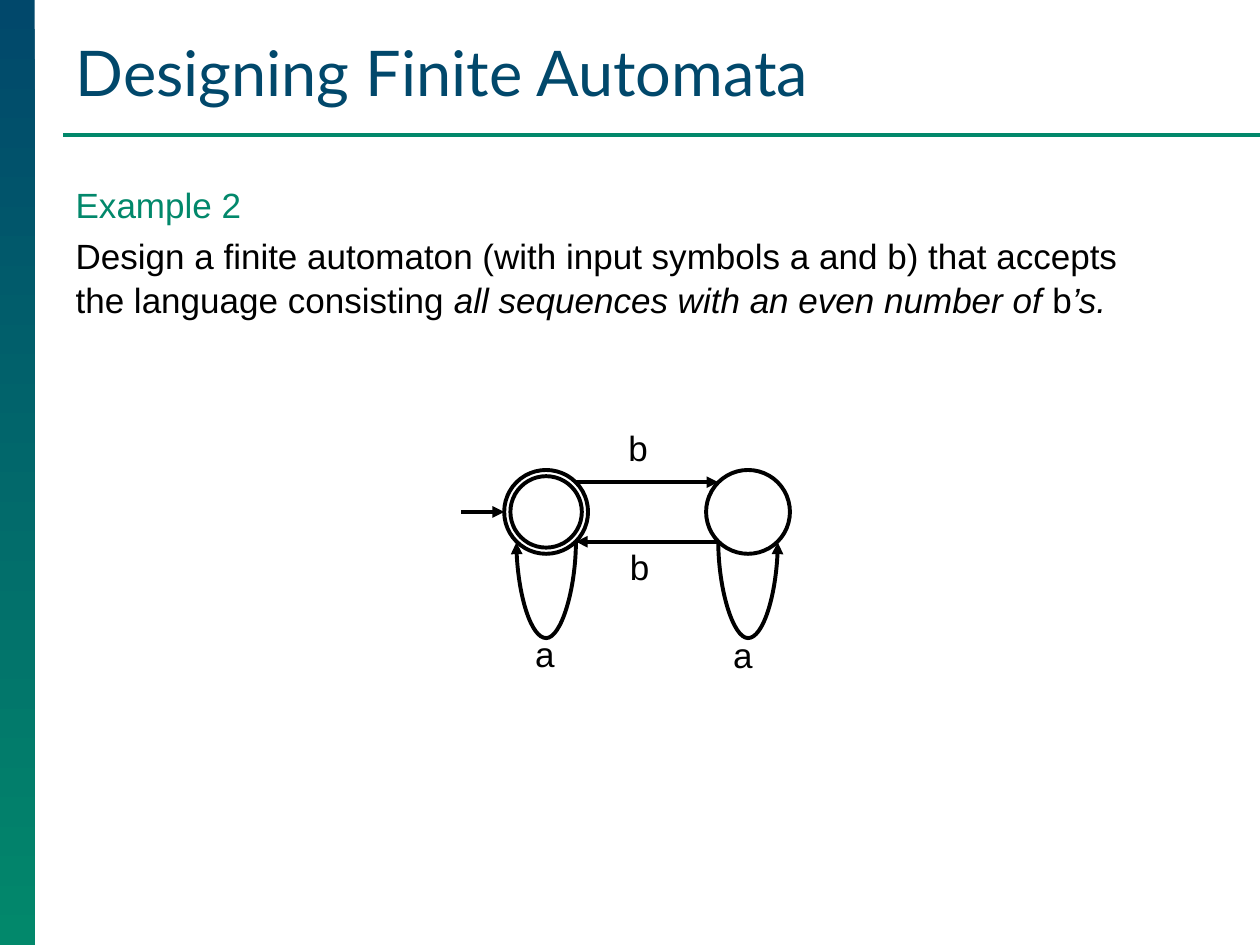
from lxml.etree import SubElement
from pptx import Presentation
from pptx.dml.color import RGBColor
from pptx.enum.shapes import MSO_CONNECTOR, MSO_SHAPE
from pptx.enum.text import MSO_ANCHOR, MSO_AUTO_SIZE, PP_ALIGN
from pptx.oxml.ns import qn
from pptx.util import Cm, Pt

NAVY = RGBColor(0x01, 0x48, 0x6B)
GREEN = RGBColor(0x02, 0x88, 0x6B)
BLACK = RGBColor(0, 0, 0)
LINE_WIDTH = Pt(2.25)

TITLE = "Designing Finite Automata"
# Each paragraph: colour, then runs of (text, italic)
BODY = [
    (GREEN, [("Example 2", False)]),
    (BLACK, [
        ("Design a finite automaton (with input symbols a and b) that accepts "
         "the language consisting ", False),
        ("all sequences with an even number of ", True),
        ("b", False),
        ("’s.", True),
    ]),
]

# Automaton geometry in centimetres
EVEN_X, ODD_X, STATE_Y = 11.01, 15.08, 10.32
STATE_SIZE, ACCEPT_SIZE = 1.69, 1.44
DIAGONAL = 0.6  # offset from a state's centre to its 45-degree points
START_X = 9.3
LOOP_DEPTH, LOOP_THICKNESS = 1.96, 0.03
# Left and top of each transition label
LABELS = [("a", 10.54, 12.62), ("a", 14.53, 12.65),
          ("b", 12.42, 8.48), ("b", 12.45, 10.87)]


def style_font(font, size, color, name="Arial"):
    font.size, font.name = Pt(size), name
    font.color.rgb = color


def add_line(kind, start, end, color=BLACK, arrow=True):
    line = slide.shapes.add_connector(kind, *(Cm(v) for v in (*start, *end)))
    line.line.color.rgb = color
    line.line.width = LINE_WIDTH
    if arrow:
        SubElement(line.line._get_or_add_ln(), qn("a:tailEnd"), type="triangle")
    SubElement(line._element.spPr, qn("a:effectLst"))
    return line


def add_arrow(start, end):
    add_line(MSO_CONNECTOR.STRAIGHT, start, end)


def add_state(x, size):
    circle = slide.shapes.add_shape(
        MSO_SHAPE.OVAL, Cm(x - size / 2), Cm(STATE_Y - size / 2), Cm(size), Cm(size))
    circle.shadow.inherit = False
    circle.fill.background()
    circle.line.color.rgb = BLACK
    circle.line.width = LINE_WIDTH


def add_loop(x, to_right):
    """Hang a loop under a state: a thin curved connector, turned to point down."""
    y = STATE_Y + DIAGONAL
    half = LOOP_THICKNESS / 2
    loop = add_line(MSO_CONNECTOR.CURVE, (x - half, y - DIAGONAL), (x + half, y + DIAGONAL))
    loop.rotation = 270 if to_right else 90
    if to_right:
        loop._element.spPr.find(qn("a:xfrm")).set("flipH", "1")
    bend = round(LOOP_DEPTH / LOOP_THICKNESS * 100000)
    adjustments = loop._element.spPr.find(qn("a:prstGeom")).get_or_add_avLst()
    SubElement(adjustments, qn("a:gd"), name="adj1", fmla=f"val {bend}")


def add_label(text, left, top):
    box = slide.shapes.add_textbox(Cm(left), Cm(top), Cm(0.91), Cm(1.12))
    box.text_frame.text = text
    box.text_frame.word_wrap = False
    style_font(box.text_frame.paragraphs[0].runs[0].font, 20, BLACK)


def place(shape, left, top, width, height):
    shape.left, shape.top = Cm(left), Cm(top)
    shape.width, shape.height = Cm(width), Cm(height)


prs = Presentation()
prs.slide_width, prs.slide_height = Cm(25.4), Cm(19.05)
slide = prs.slides.add_slide(prs.slide_layouts[1])

# Side band and title rule
band = slide.shapes.add_shape(MSO_SHAPE.RECTANGLE, 0, 0, Cm(0.7), prs.slide_height)
band.shadow.inherit = False
band.line.fill.background()
band.fill.gradient()
band.fill.gradient_angle = 270
for stop, color, position in zip(band.fill.gradient_stops, (NAVY, GREEN), (0, 1)):
    stop.color.rgb = color
    stop.position = position
add_line(MSO_CONNECTOR.STRAIGHT, (1.27, 2.72), (25.4, 2.72), GREEN, arrow=False)

# Title and body
title = slide.shapes.title
place(title, 1.27, 0.53, 23.57, 1.8)
title.text_frame.text = TITLE
title.text_frame.auto_size = MSO_AUTO_SIZE.NONE
title.text_frame.vertical_anchor = MSO_ANCHOR.BOTTOM
title.text_frame.paragraphs[0].alignment = PP_ALIGN.LEFT
style_font(title.text_frame.paragraphs[0].runs[0].font, 36, NAVY, "Lato")

body = slide.placeholders[1]
place(body, 1.27, 3.53, 22.66, 14)
frame = body.text_frame
frame.auto_size = MSO_AUTO_SIZE.NONE
for index, (color, runs) in enumerate(BODY):
    paragraph = frame.add_paragraph() if index else frame.paragraphs[0]
    properties = paragraph._p.get_or_add_pPr()
    properties.set("marL", "0")
    properties.set("indent", "0")
    SubElement(properties, qn("a:buNone"))
    paragraph.space_before = Pt(4 if index else 0)
    paragraph.line_spacing = 1.05
    for text, italic in runs:
        run = paragraph.add_run()
        run.text = text
        run.font.italic = italic
        style_font(run.font, 20, color)

# Automaton
add_state(EVEN_X, STATE_SIZE)
add_state(EVEN_X, ACCEPT_SIZE)
add_state(ODD_X, STATE_SIZE)
add_arrow((START_X, STATE_Y), (EVEN_X - STATE_SIZE / 2, STATE_Y))
even_side, odd_side = EVEN_X + DIAGONAL, ODD_X - DIAGONAL
add_arrow((even_side, STATE_Y - DIAGONAL), (odd_side, STATE_Y - DIAGONAL))
add_arrow((odd_side, STATE_Y + DIAGONAL), (even_side, STATE_Y + DIAGONAL))
add_loop(EVEN_X, to_right=False)
add_loop(ODD_X, to_right=True)
for label in LABELS:
    add_label(*label)

prs.save("out.pptx")
